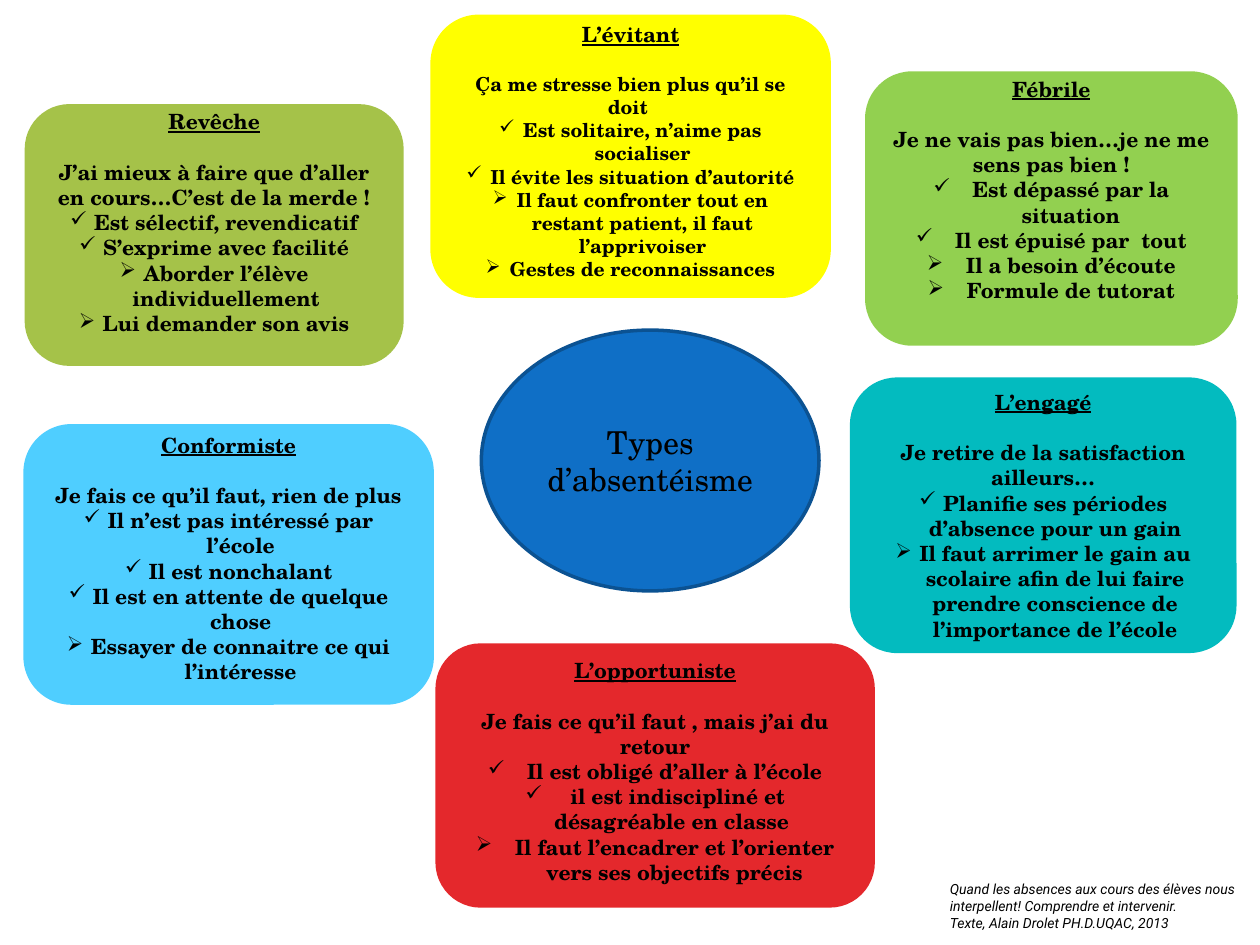
"""Build a slide of six absentee profiles around a central theme."""
from lxml import etree
from pptx import Presentation
from pptx.dml.color import RGBColor
from pptx.enum.shapes import MSO_SHAPE
from pptx.enum.text import MSO_ANCHOR, MSO_AUTO_SIZE, PP_ALIGN
from pptx.oxml.ns import qn
from pptx.util import Inches, Pt

OVAL, ROUND = MSO_SHAPE.OVAL, MSO_SHAPE.ROUNDED_RECTANGLE
MIDDLE, CENTER = MSO_ANCHOR.MIDDLE, PP_ALIGN.CENTER
GROW = MSO_AUTO_SIZE.SHAPE_TO_FIT_TEXT
SERIF, SANS = "TeX Gyre Schola", "Roboto"
BLACK = RGBColor(0, 0, 0)
BLUE, NAVY = RGBColor(0x0F, 0x6F, 0xC6), RGBColor(0x0B, 0x52, 0x92)
OLIVE, GREEN = RGBColor(0xA5, 0xC2, 0x49), RGBColor(0x92, 0xD0, 0x50)
YELLOW, SKY = RGBColor(0xFF, 0xFF, 0), RGBColor(0x4F, 0xCE, 0xFF)
RED, TEAL = RGBColor(0xE4, 0x28, 0x2C), RGBColor(0x03, 0xBB, 0xBF)
TICK, ARROW = "✓", "➢"
PAD, GAP = 0.05, 14.4

THEME = "Types d’absentéisme"
THEME_AT = (3.82, 2.62, 2.68, 2.07)
CARDS = [
    dict(title="Revêche", at=(0.21, 0.84, 2.98, 2.05), fill=OLIVE,
         lift=0.2, indent=0.19, size=12,
         quote="J’ai mieux à faire que d’aller en cours…C’est de la merde !",
         traits=["Est sélectif, revendicatif", "S’exprime avec facilité"],
         advice=["Aborder l’élève individuellement", "Lui demander son avis"]),
    dict(title="Fébrile", at=(6.88, 0.58, 2.93, 2.15), fill=GREEN,
         lift=0.3, indent=0.31, size=12,
         quote="Je ne vais pas bien…je ne me sens pas bien !",
         traits=["Est dépassé par la situation", "Il est épuisé par  tout"],
         advice=["Il a besoin d’écoute", "Formule de tutorat"]),
    dict(title="L’évitant", at=(3.43, 0.13, 3.15, 2.22), fill=YELLOW,
         lift=0.08, indent=0.19, size=11,
         quote="Ça me stresse bien plus qu’il se doit ",
         traits=["Est solitaire, n’aime pas socialiser",
                 "Il évite les situation d’autorité"],
         advice=["Il faut confronter tout en restant patient, "
                 "il faut l’apprivoiser", "Gestes de reconnaissances"]),
    dict(title="Conformiste", at=(0.2, 3.38, 3.23, 2.2), fill=SKY,
         lift=0.1, indent=0.19, size=12,
         quote="Je fais ce qu’il faut, rien de plus",
         traits=["Il n’est pas intéressé par l’école", "Il est nonchalant",
                 "Il est en attente de quelque chose"],
         advice=["Essayer de connaitre ce qui l’intéresse"]),
    dict(title="L’opportuniste", at=(3.47, 5.12, 3.46, 2.07), fill=RED,
         lift=0.07, indent=0.31, size=12,
         quote="Je fais ce qu’il faut , mais j’ai du retour",
         traits=["Il est obligé d’aller à l’école",
                 " il est indiscipliné et désagréable en classe "],
         advice=["Il faut l’encadrer et l’orienter vers ses objectifs précis"]),
    dict(title="L’engagé", at=(6.76, 3.01, 3.04, 2.16), fill=TEAL,
         lift=0, indent=0.19, size=12,
         quote="Je retire de la satisfaction ailleurs…",
         traits=["Planifie ses périodes d’absence pour un gain"],
         advice=["Il faut arrimer le gain au scolaire afin de lui faire "
                 "prendre conscience de l’importance de l’école"]),
]
SOURCE_AT = (7.44, 6.94, 2.68, 0.5)
SOURCE = [
    "Quand les absences aux cours des élèves nous interpellent! "
    "Comprendre et intervenir.",
    "Texte, Alain Drolet PH.D.UQAC, 2013",
]


def add_form(slide, kind, at, fill, line):
    form = slide.shapes.add_shape(kind, *map(Inches, at))
    form.shadow.inherit = False
    form.fill.solid()
    form.fill.fore_color.rgb = fill
    form.line.color.rgb = line
    form.line.width = Pt(2)
    form.text_frame.word_wrap = True
    form.text_frame.vertical_anchor = MIDDLE
    return form.text_frame


def add_text(frame, text, size, first=False, face=SERIF, align=CENTER,
             mark=None, indent=0):
    para = frame.paragraphs[0] if first else frame.add_paragraph()
    para.alignment = align
    if mark:
        props = para._p.get_or_add_pPr()
        props.set("marL", str(Inches(indent)))
        props.set("indent", str(-Inches(indent)))
        etree.SubElement(props, qn("a:buChar")).set("char", mark)
    para.add_run().text = text
    para.font.name = face
    para.font.size = Pt(size)
    para.font.color.rgb = BLACK
    return para


def add_card(slide, card):
    frame = add_form(slide, ROUND, card["at"], card["fill"], card["fill"])
    frame.margin_bottom = Inches(PAD + card["lift"])
    title = add_text(frame, card["title"], 12, first=True)
    title.font.underline = True
    title.space_after = Pt(GAP)
    add_text(frame, card["quote"], card["size"])
    for mark, items in ((TICK, card["traits"]), (ARROW, card["advice"])):
        for item in items:
            add_text(frame, item, card["size"], mark=mark,
                     indent=card["indent"])
    for para in frame.paragraphs:
        para.font.bold = True


def main():
    deck = Presentation()
    deck.slide_width, deck.slide_height = Inches(10), Inches(7.5)
    slide = deck.slides.add_slide(deck.slide_layouts[6])
    theme = add_form(slide, OVAL, THEME_AT, BLUE, NAVY)
    add_text(theme, THEME, 18, first=True)
    for card in CARDS:
        add_card(slide, card)
    note = slide.shapes.add_textbox(*map(Inches, SOURCE_AT)).text_frame
    note.word_wrap = True
    note.auto_size = GROW
    for row, text in enumerate(SOURCE):
        para = add_text(note, text, 8, first=row == 0, face=SANS, align=None)
        para.font.italic = True
    deck.save("out.pptx")


if __name__ == "__main__":
    main()
